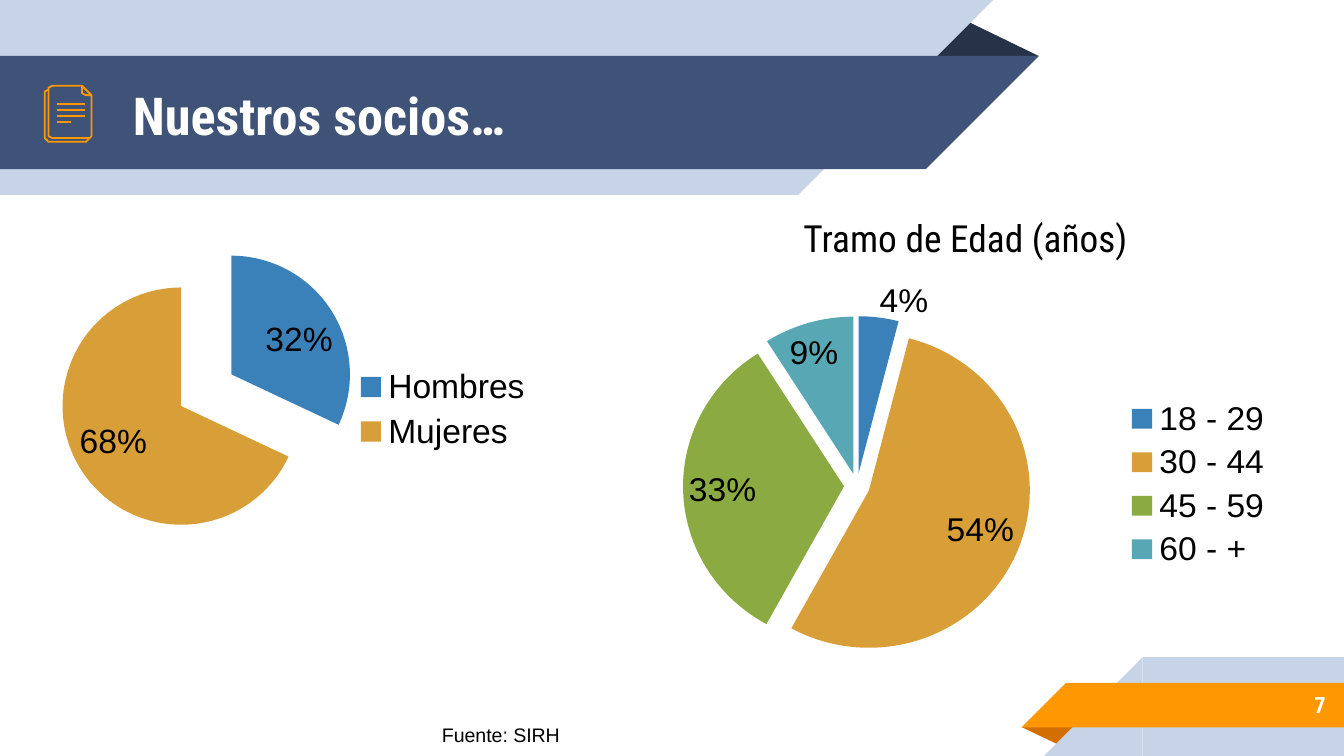
from lxml import etree
from pptx import Presentation
from pptx.chart.data import CategoryChartData
from pptx.dml.color import RGBColor
from pptx.enum.chart import XL_CHART_TYPE, XL_LABEL_POSITION, XL_LEGEND_POSITION
from pptx.enum.shapes import MSO_CONNECTOR, MSO_SHAPE
from pptx.enum.text import MSO_ANCHOR, MSO_AUTO_SIZE, PP_ALIGN
from pptx.oxml.ns import qn
from pptx.util import Pt

HEAD, BODY = "Roboto Condensed", "Arial"
PALE, NAVY, SHADOW = "C7D3E6", "3F5378", "263248"
ORANGE, RUST, WHITE, BLACK = "FF9800", "D26F00", "FFFFFF", "000000"
SLICES = ["3A81BA", "D89F39", "8BAB42", "57A7B5"]


def rgb(value):
    return RGBColor.from_string(value)


def set_font(font, color, **values):
    for name, value in values.items():
        setattr(font, name, value)
    font.color.rgb = rgb(color)


def put_text(sp, text, color, align=PP_ALIGN.LEFT, frame=None, **values):
    tf = sp.text_frame
    tf.word_wrap = True
    for name, value in (frame or {}).items():
        setattr(tf, name, value)
    p = tf.paragraphs[0]
    p.alignment = align
    r = p.add_run()
    r.text = text
    set_font(r.font, color, **values)


def add_label(s, box, *args, **values):
    put_text(s.shapes.add_textbox(*map(Pt, box)), *args, **values)


def add_solid(s, kind, box, color, rotation=0):
    sp = s.shapes.add_shape(kind, *map(Pt, box))
    sp.shadow.inherit = False
    sp.fill.solid()
    sp.fill.fore_color.rgb = rgb(color)
    sp.line.fill.background()
    sp.rotation = rotation
    return sp


def add_fold(s, box, color, rotation=0):
    add_solid(s, MSO_SHAPE.ISOSCELES_TRIANGLE, box, color, rotation).adjustments[0] = 0.324


def add_strip(s, box, color, slant_right):
    """Band with one 45 degree end, right or left."""
    x, y, w, h = box
    band_x, tip_x, turn = (x, x + w - h, 90) if slant_right else (x + h, x, 270)
    add_solid(s, MSO_SHAPE.RECTANGLE, (band_x, y, w - h, h), color)
    add_solid(s, MSO_SHAPE.RIGHT_TRIANGLE, (tip_x, y, h, h), color, turn)


def add_banner(s, x, y):
    add_fold(s, (x + 495.5, y + 10, 61, 20), SHADOW)
    add_strip(s, (x, y, 532, 104.4), PALE, True)
    add_strip(s, (x, y + 30, 556.6, 60.6), NAVY, True)


def add_footer(s, x, y):
    add_fold(s, (x, y + 37.5, 31, 10), RUST, 180)
    add_strip(s, (x + 12, y, 720 - x - 12, 53), PALE, False)
    add_strip(s, (x, y + 13.9, 720 - x, 23.8), ORANGE, False)
    add_label(s, (599.8, y + 13, 117.4, 25.2), "7", WHITE, PP_ALIGN.RIGHT,
              {"vertical_anchor": MSO_ANCHOR.MIDDLE},
              name=HEAD, size=Pt(12), bold=True)


def add_title(s, box, text):
    title = s.shapes.title
    title.left, title.top, title.width, title.height = map(Pt, box)
    frame = {"vertical_anchor": MSO_ANCHOR.MIDDLE, "auto_size": MSO_AUTO_SIZE.NONE,
             "margin_top": Pt(7.2), "margin_bottom": Pt(7.2)}
    put_text(title, text, WHITE, frame=frame, name=HEAD, size=Pt(28), bold=True)
    # Bring the title in front of the banner
    title.element.getparent().append(title.element)


def add_document_icon(s, x, y):
    def style(sp):
        sp.line.color.rgb = rgb(ORANGE)
        sp.line.width = Pt(0.96)

    back = [(23, 28), (22, 29.5), (1.5, 29.5), (0, 28), (0, 3), (1.5, 1.5)]
    front = [(24.5, 5), (24.5, 26.6), (23, 28), (3.2, 28), (2, 26.6),
             (2, 1.2), (3.2, 0), (19.5, 0)]
    corner = [(19.5, 0), (24.5, 5), (21, 5), (19.5, 4)]
    for points, close in ((back, False), (front, False), (corner, True)):
        points = [(x + dx, y + dy) for dx, dy in points]
        builder = s.shapes.build_freeform(*points[0], scale=Pt(1))
        builder.add_line_segments(points[1:], close=close)
        sp = builder.convert_to_shape()
        sp.shadow.inherit = False
        sp.fill.background()
        style(sp)
    # Lines of writing
    for i, end in enumerate((21, 21, 21, 13.7)):
        row = y + 9.9 + 3.2 * i
        line = s.shapes.add_connector(MSO_CONNECTOR.STRAIGHT, Pt(x + 5.8), Pt(row),
                                      Pt(x + end), Pt(row))
        style(line)
        etree.SubElement(line.element.spPr, qn("a:effectLst"))


def add_pie(s, box, shares, plot_box, explosion):
    data = CategoryChartData()
    data.categories = list(shares)
    data.add_series("Series 1", list(shares.values()))
    chart = s.shapes.add_chart(XL_CHART_TYPE.PIE, *map(Pt, box), data).chart
    chart.has_title = False
    set_font(chart.font, BLACK, name=BODY, size=Pt(18))
    chart.has_legend = True
    chart.legend.position = XL_LEGEND_POSITION.RIGHT
    chart.legend.include_in_layout = False

    # Slices and percentages
    plot = chart.plots[0]
    plot.vary_by_categories = True
    series = plot.series[0]
    for i, color in enumerate(SLICES[:len(shares)]):
        fill = series.points[i].format.fill
        fill.solid()
        fill.fore_color.rgb = rgb(color)
    labels = series.data_labels
    for name, value in {"show_percentage": True, "show_value": False,
                        "number_format": "0%", "number_format_is_linked": False,
                        "position": XL_LABEL_POSITION.BEST_FIT}.items():
        setattr(labels, name, value)
    set_font(labels.font, BLACK, name=BODY, size=Pt(18))

    # Pulled-out slices
    pull = etree.Element(qn("c:explosion"), val=str(explosion))
    series._element.find(qn("c:tx")).addnext(pull)

    # Fixed plot area
    area = chart.element.find(".//" + qn("c:plotArea"))
    for old in area.findall(qn("c:layout")):
        area.remove(old)
    layout = etree.Element(qn("c:layout"))
    area.insert(0, layout)
    manual = etree.SubElement(layout, qn("c:manualLayout"))
    values = ["inner", "edge", "edge", *map(str, plot_box)]
    for tag, value in zip(("layoutTarget", "xMode", "yMode", "x", "y", "w", "h"), values):
        etree.SubElement(manual, qn("c:" + tag), val=value)


def main():
    prs = Presentation()
    prs.slide_width, prs.slide_height = Pt(720), Pt(405)
    s = prs.slides.add_slide(prs.slide_layouts[5])

    add_banner(s, 0, 0)
    add_footer(s, 547.2, 352)
    add_title(s, (64, 31, 414, 60.5), "Nuestros socios…")
    add_document_icon(s, 24.5, 46)

    # Members by sex and by age
    add_pie(s, (14.4, 117.4, 278.6, 203.8), {"Hombres": 32, "Mujeres": 68},
            (0.02, 0.06, 0.65, 0.78), 25)
    add_pie(s, (308.9, 146.2, 380.2, 221),
            {"18 - 29": 4, "30 - 44": 54, "45 - 59": 33, "60 - +": 9},
            (0.15, 0.08, 0.49, 0.85), 8)
    add_label(s, (367.2, 111.6, 300.2, 31.7), "Tramo de Edad (años)", BLACK,
              PP_ALIGN.CENTER, name=HEAD, size=Pt(20))
    add_label(s, (229.7, 383.8, 147.6, 20.9), "Fuente: SIRH", BLACK,
              name=BODY, size=Pt(10.5))

    prs.save("out.pptx")


if __name__ == "__main__":
    main()
